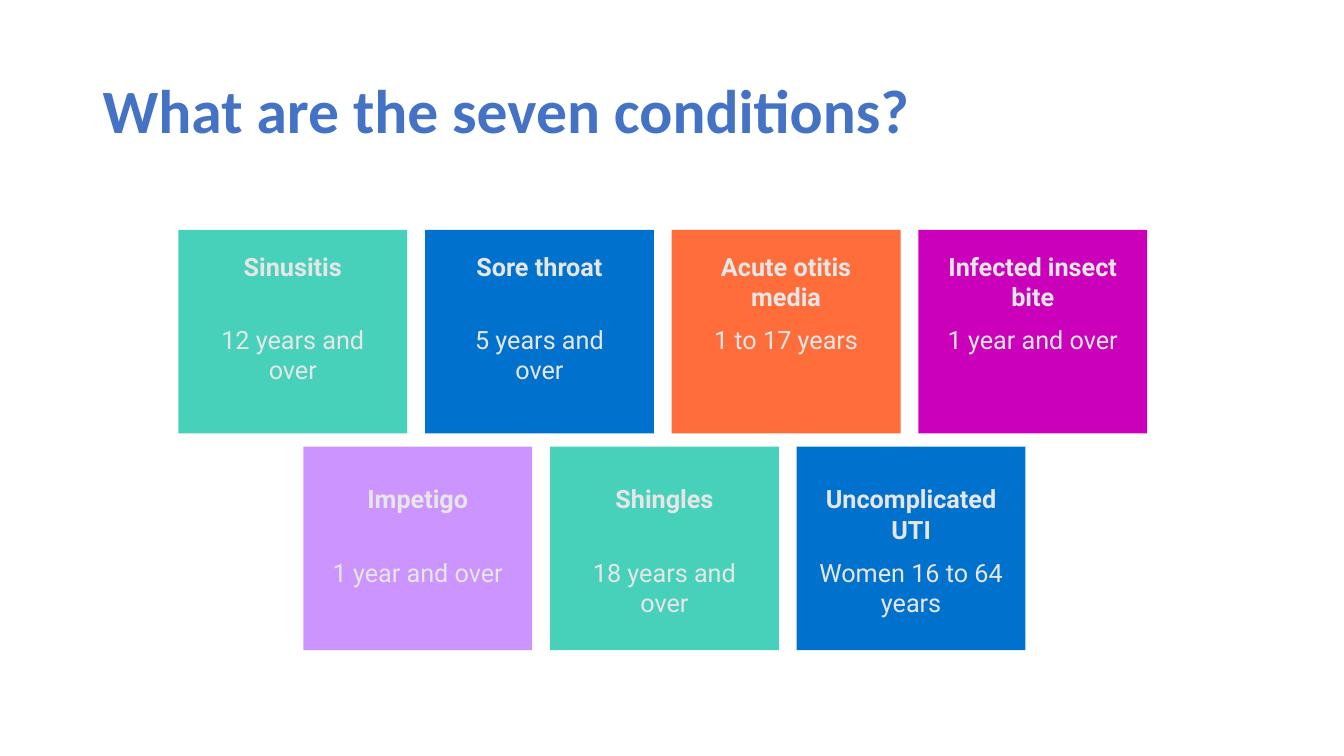
from pptx import Presentation
from pptx.dml.color import RGBColor
from pptx.enum.shapes import MSO_SHAPE
from pptx.enum.text import MSO_ANCHOR, MSO_AUTO_SIZE, PP_ALIGN
from pptx.util import Inches, Pt

TITLE_BLUE = RGBColor(0x44, 0x72, 0xC4)
TEAL = RGBColor(0x47, 0xD1, 0xBA)
BLUE = RGBColor(0x00, 0x72, 0xCE)
ORANGE = RGBColor(0xFF, 0x6D, 0x3A)
MAGENTA = RGBColor(0xCB, 0x00, 0xBA)
LILAC = RGBColor(0xCC, 0x94, 0xFF)
PALE_GREY = RGBColor(0xE7, 0xE6, 0xE6)

# Card grid, in inches
CARD_WIDTH, CARD_HEIGHT = 2.27, 2.02
COLUMN_STEP = 2.447
TEXT_WIDTH = 1.93
LINE_HEIGHT = 0.31
LINE_POINTS, GAP_POINTS = 21.2, 9.4

# Each row: left, top, text offset from the card top, cards
# Each card: condition, its lines, ages, their lines, colour, text width
ROWS = [
    (1.77, 2.28, 0.16, [
        ("Sinusitis", 1, "12 years and over", 2, TEAL, TEXT_WIDTH),
        ("Sore throat", 1, "5 years and over", 2, BLUE, TEXT_WIDTH),
        ("Acute otitis media", 2, "1 to 17 years", 1, ORANGE, TEXT_WIDTH),
        ("Infected insect bite", 2, "1 year and over", 1, MAGENTA, TEXT_WIDTH),
    ]),
    (3.01, 4.43, 0.32, [
        ("Impetigo", 1, "1 year and over", 1, LILAC, TEXT_WIDTH),
        ("Shingles", 1, "18 years and over", 2, TEAL, TEXT_WIDTH),
        ("Uncomplicated UTI", 2, "Women 16 to 64 years", 2, BLUE, 2.08),
    ]),
]


def add_text_box(left, top, width, height):
    box = slide.shapes.add_textbox(
        Inches(left), Inches(top), Inches(width), Inches(height))
    box.text_frame.word_wrap = True
    return box.text_frame


def write(paragraph, text, color, **font_format):
    run = paragraph.add_run()
    run.text = text
    run.font.color.rgb = color
    for name, value in font_format.items():
        setattr(run.font, name, value)


presentation = Presentation()
presentation.slide_width = Inches(13.333)
presentation.slide_height = Inches(7.5)
slide = presentation.slides.add_slide(presentation.slide_layouts[6])

# Title
title = add_text_box(0.92, 0.4, 11.5, 1.45)
title.vertical_anchor = MSO_ANCHOR.MIDDLE
title.paragraphs[0].line_spacing = 0.9
write(title.paragraphs[0], "What are the seven conditions?", TITLE_BLUE,
      name="Calibri", size=Pt(44), bold=True)

# Condition cards
for row_left, top, text_offset, cards in ROWS:
    for column, card in enumerate(cards):
        condition, condition_lines, ages, age_lines, color, text_width = card
        left = row_left + column * COLUMN_STEP
        shape = slide.shapes.add_shape(
            MSO_SHAPE.RECTANGLE, Inches(left), Inches(top),
            Inches(CARD_WIDTH), Inches(CARD_HEIGHT))
        shape.shadow.inherit = False
        shape.fill.solid()
        shape.fill.fore_color.rgb = color
        shape.line.fill.background()

        # Condition and ages; every condition takes the room of two lines
        frame = add_text_box(
            left + (CARD_WIDTH - text_width) / 2, top + text_offset,
            text_width, 0.83 + age_lines * LINE_HEIGHT)
        frame.auto_size = MSO_AUTO_SIZE.SHAPE_TO_FIT_TEXT
        heading, detail = frame.paragraphs[0], frame.add_paragraph()
        detail.space_before = Pt(GAP_POINTS + (2 - condition_lines) * LINE_POINTS)
        for paragraph, text, bold in ((heading, condition, True), (detail, ages, False)):
            paragraph.alignment = PP_ALIGN.CENTER
            write(paragraph, text, PALE_GREY, name="Roboto", size=Pt(18), bold=bold)

presentation.save("out.pptx")
